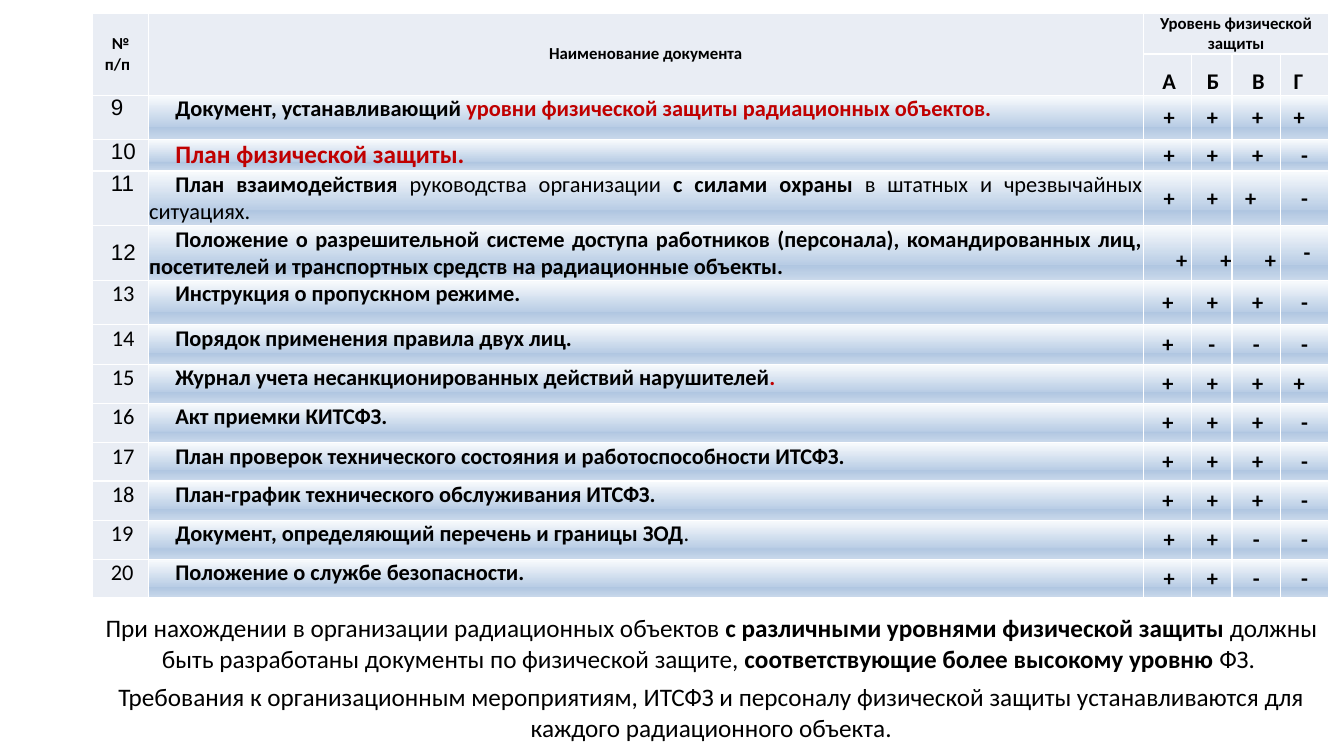
from lxml import etree
from pptx import Presentation
from pptx.dml.color import RGBColor
from pptx.enum.text import MSO_ANCHOR, MSO_AUTO_SIZE, PP_ALIGN
from pptx.oxml.ns import qn
from pptx.util import Inches, Pt

MID, LOW, TOP = MSO_ANCHOR.MIDDLE, MSO_ANCHOR.BOTTOM, MSO_ANCHOR.TOP
MIDST, JUST, LEFT = PP_ALIGN.CENTER, PP_ALIGN.JUSTIFY, PP_ALIGN.LEFT
GROW = MSO_AUTO_SIZE.SHAPE_TO_FIT_TEXT

UNIT = Inches(0.01)
WIDE, HIGH = 1333, 750
EDGE, SPAN = 92, 1227
COLS = [55, 987, 48, 40, 48, 48]
ROWS = [39, 41, 44, 31] + [44] * 3 + [39] * 3 + [38, 39, 39, 38]

HUES = {"text": "000000", "red": "C00000", "head": "E9EDF4", "line": "FFFFFF"}
FADE = [(3, "F6F9FC"), (71, "B9CDE5"), (72, "B0C6E1"), (100, "CAD9EB")]

PLAIN = {"name": "Calibri", "size": Pt(16), "bold": False}
BOLD = {**PLAIN, "bold": True}
ARIAL = {**PLAIN, "name": "Arial"}
SMALL = {**BOLD, "size": Pt(12)}
LARGE = {**BOLD, "size": Pt(18)}
NOTE = {**PLAIN, "size": Pt(18)}

DOCS = [
    (9, [("Документ, устанавливающий ", BOLD),
         ("уровни физической защиты радиационных объектов.", BOLD, "red")], "++++"),
    (10, [("План физической защиты.", LARGE, "red")], "+++-"),
    (11, [("План взаимодействия ", BOLD), ("руководства организации ", PLAIN),
          ("с силами охраны ", BOLD),
          ("в штатных и чрезвычайных ситуациях.", PLAIN)], "+++-"),
    (12, [("Положение о разрешительной системе доступа работников (персонала), "
           "командированных лиц, посетителей и транспортных средств на "
           "радиационные объекты.", BOLD)], "+++-"),
    (13, [("Инструкция о пропускном режиме.", BOLD)], "+++-"),
    (14, [("Порядок применения правила двух лиц.", BOLD)], "+---"),
    (15, [("Журнал учета несанкционированных действий нарушителей", BOLD),
          (".", BOLD, "red")], "++++"),
    (16, [("Акт приемки КИТСФЗ.", BOLD)], "+++-"),
    (17, [("План проверок технического состояния и работоспособности ИТСФЗ.",
           BOLD)], "+++-"),
    (18, [("План-график технического обслуживания ИТСФЗ.", BOLD)], "+++-"),
    (19, [("Документ, определяющий перечень и границы ЗОД", BOLD),
          (".", PLAIN)], "++--"),
    (20, [("Положение о службе безопасности.", BOLD)], "++--"),
]

NOTES = [
    [("При нахождении в организации радиационных объектов ", NOTE),
     ("с различными уровнями физической защиты ", LARGE),
     ("должны быть разработаны документы по физической защите, ", NOTE),
     ("соответствующие более высокому уровню ", LARGE), ("ФЗ. ", NOTE)],
    [("Требования к организационным мероприятиям, ИТСФЗ и персоналу физической "
      "защиты устанавливаются для каждого радиационного объекта.", NOTE)],
]


def set_all(thing, look):
    for key, value in look.items():
        setattr(thing, key, value)


def add_runs(para, runs, align=LEFT, left=0, first=0, **look):
    set_all(para, {"alignment": align, **look})
    props = para._p.get_or_add_pPr()
    props.set("marL", str(left * UNIT))
    props.set("indent", str(first * UNIT))
    for words, font, *hue in runs:
        run = para.add_run()
        run.text = words
        set_all(run.font, font)
        run.font.color.rgb = RGBColor.from_string(HUES[hue[0] if hue else "text"])


def fill_cell(cell, runs, anchor=TOP, **look):
    cell.vertical_anchor = anchor
    add_runs(cell.text_frame.paragraphs[0], runs, **look)


def add_solid(node, hue):
    fill = etree.SubElement(node, qn("a:solidFill"))
    etree.SubElement(fill, qn("a:srgbClr"), val=hue)


def paint(cell, fade):
    set_all(cell, {"margin_left": UNIT, "margin_right": UNIT,
                   "margin_top": 0, "margin_bottom": 0})
    props = cell._tc.get_or_add_tcPr()
    for side in "LRTB":
        line = etree.SubElement(props, qn(f"a:ln{side}"), w=str(Pt(1)))
        add_solid(line, HUES["line"])
    if not fade:
        add_solid(props, HUES["head"])
        return
    fill = etree.SubElement(props, qn("a:gradFill"), rotWithShape="1")
    stops = etree.SubElement(fill, qn("a:gsLst"))
    for place, hue in FADE:
        stop = etree.SubElement(stops, qn("a:gs"), pos=str(place * 1000))
        etree.SubElement(stop, qn("a:srgbClr"), val=hue)
    etree.SubElement(fill, qn("a:lin"), ang="5400000", scaled="0")


def add_grid(slide):
    frame = slide.shapes.add_table(len(ROWS), len(COLS), EDGE * UNIT, 13 * UNIT,
                                   SPAN * UNIT, sum(ROWS) * UNIT)
    grid = frame.table
    set_all(grid, {"first_row": False, "horz_banding": False})
    for col, size in zip(grid.columns, COLS):
        col.width = size * UNIT
    for row, size in zip(grid.rows, ROWS):
        row.height = size * UNIT
    for row in range(len(ROWS)):
        for col in range(len(COLS)):
            paint(grid.cell(row, col), row > 1 and col > 0)
    return grid


def add_head(grid):
    for start, end in [((0, 0), (1, 0)), ((0, 1), (1, 1)), ((0, 2), (0, 5))]:
        grid.cell(*start).merge(grid.cell(*end))
    fill_cell(grid.cell(0, 0), [("№", SMALL)], MID, left=18)
    add_runs(grid.cell(0, 0).text_frame.add_paragraph(), [("п/п", SMALL)], left=11)
    fill_cell(grid.cell(0, 1), [("Наименование документа", SMALL)], MID, align=MIDST)
    fill_cell(grid.cell(0, 2), [("Уровень физической защиты", SMALL)], LOW, align=MIDST)
    for col, (name, left) in enumerate(zip("АБВГ", [18, 14, 19, 12]), 2):
        fill_cell(grid.cell(1, col), [(name, BOLD)], LOW, left=left)


def add_doc(grid, row, num, title, marks):
    tall = {"line_spacing": 1.57} if num == 12 else {}
    lead = 18 if 13 <= num <= 18 else 17
    font = ARIAL if num <= 12 else PLAIN
    fill_cell(grid.cell(row, 0), [(str(num), font)], left=lead, **tall)
    fill_cell(grid.cell(row, 1), title, align=JUST, first=26)
    lefts = [36 - lead, 14, 12 if num == 11 else 19, 12]
    for col, (mark, left) in enumerate(zip(marks, lefts), 2):
        if mark == "-":
            look = {"align": MIDST}
            mark = " -" if tall else mark
        elif tall:
            look = {"align": MIDST, "first": 28, **tall}
        else:
            look = {"left": left}
        fill_cell(grid.cell(row, col), [(mark, BOLD)], MID, **look)


def add_notes(slide):
    box = slide.shapes.add_textbox(EDGE * UNIT, 603 * UNIT, SPAN * UNIT, 140 * UNIT)
    frame = box.text_frame
    set_all(frame, {"word_wrap": True, "auto_size": GROW})
    add_runs(frame.paragraphs[0], NOTES[0], align=MIDST)
    add_runs(frame.add_paragraph(), NOTES[1], align=MIDST, space_before=Pt(6))


def main():
    deck = Presentation()
    set_all(deck, {"slide_width": WIDE * UNIT, "slide_height": HIGH * UNIT})
    slide = deck.slides.add_slide(deck.slide_layouts[6])
    grid = add_grid(slide)
    add_head(grid)
    for row, doc in enumerate(DOCS, 2):
        add_doc(grid, row, *doc)
    add_notes(slide)
    deck.save("out.pptx")


if __name__ == "__main__":
    main()
